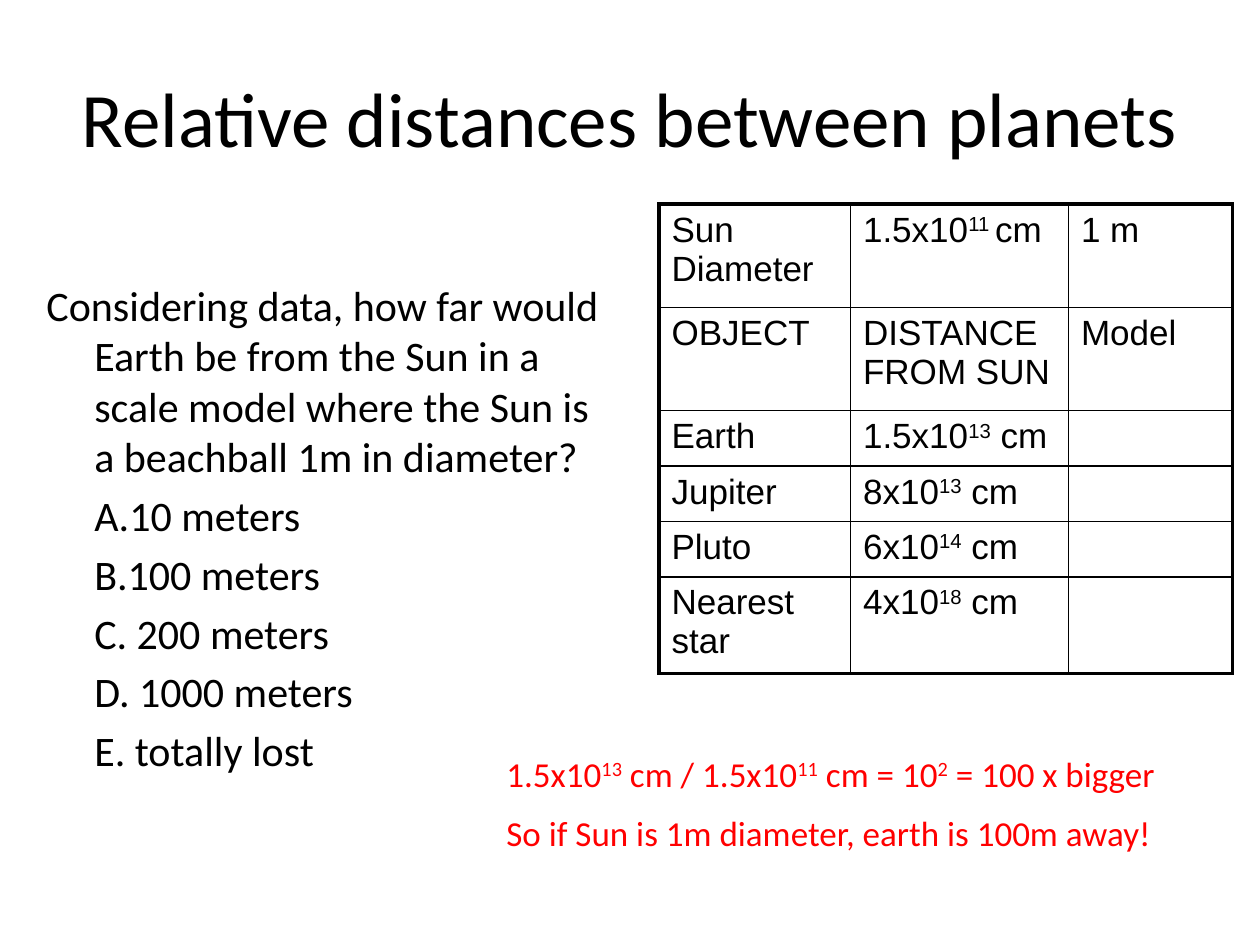
from lxml import etree
from pptx import Presentation
from pptx.dml.color import RGBColor
from pptx.enum.text import MSO_ANCHOR, PP_ALIGN
from pptx.oxml.ns import qn
from pptx.util import Inches, Pt

CENTER = PP_ALIGN.CENTER
LEFT = PP_ALIGN.LEFT
MIDDLE = MSO_ANCHOR.MIDDLE
BLACK = "000000"
RED = "FF0000"

TITLE = "Relative distances between planets"
ASK = ("Considering data, how far would Earth be from the Sun in a scale model "
       "where the Sun is a beachball 1m in diameter?")
PICKS = ["A.10 meters", "B.100 meters", "C. 200 meters", "D. 1000 meters",
         "E. totally lost"]
NOTES = ["1.5x10^13^ cm / 1.5x10^11^ cm = 10^2^ = 100 x bigger",
         "So if Sun is 1m diameter, earth is 100m away!"]
ROWS = [
    ["Sun Diameter", "1.5x10^11 ^cm", "1 m"],
    ["OBJECT", "DISTANCE FROM SUN", "Model"],
    ["Earth", "1.5x10^13^ cm", ""],
    ["Jupiter", "8x10^13^ cm", ""],
    ["Pluto", "6x10^14^ cm", ""],
    ["Nearest star", "4x10^18^ cm", ""],
]
WIDTHS = [1.52, 1.73, 1.3]
HEIGHTS = [0.82, 0.82, 0.44, 0.44, 0.44, 0.44]


def paint(color):
    """Turn a hex string into a colour."""
    return RGBColor.from_string(color)


def write(para, text, size=24, font="Calibri", color=BLACK, align=LEFT,
          before=0.2, margin=0, indent=0):
    """Fill a paragraph, raising the parts that stand between carets."""
    para.alignment = align
    para.space_before = Pt(size * before)
    props = para._p.get_or_add_pPr()
    props.set("marL", str(Inches(margin)))
    props.set("indent", str(Inches(indent)))
    for num, part in enumerate(text.split("^")):
        if not part:
            continue
        run = para.add_run()
        run.text = part
        run.font.size = Pt(size)
        run.font.name = font
        run.font.color.rgb = paint(color)
        if num % 2:
            run._r.get_or_add_rPr().set("baseline", "30000")


def add_title(slide, text):
    """Place and fill the title."""
    title = slide.shapes.title
    title.left, title.top = Inches(0.5), Inches(0.3)
    title.width, title.height = Inches(9), Inches(1.25)
    title.text_frame.vertical_anchor = MIDDLE
    write(title.text_frame.paragraphs[0], text, size=44, align=CENTER, before=0)


def add_box(slide, left, top, width, height):
    """Add a wrapping text box and return its frame."""
    box = slide.shapes.add_textbox(Inches(left), Inches(top),
                                   Inches(width), Inches(height))
    box.text_frame.word_wrap = True
    return box.text_frame


def add_quiz(slide):
    """Add the question with its choices."""
    frame = add_box(slide, 0.27, 2.17, 4.67, 4.5)
    write(frame.paragraphs[0], ASK, margin=0.38, indent=-0.38)
    for pick in PICKS:
        write(frame.add_paragraph(), pick, margin=0.38)


def add_notes(slide):
    """Add the worked answer."""
    frame = add_box(slide, 3.92, 5.92, 6.08, 0.93)
    for num, note in enumerate(NOTES):
        para = frame.add_paragraph() if num else frame.paragraphs[0]
        write(para, note, size=20, color=RED, before=0.5)


def add_edge(cell, side, width):
    """Draw one border of a cell."""
    line = etree.SubElement(cell._tc.get_or_add_tcPr(), qn("a:" + side),
                            w=str(Pt(width)))
    fill = etree.SubElement(line, qn("a:solidFill"))
    etree.SubElement(fill, qn("a:srgbClr"), val=BLACK)


def add_grid(slide):
    """Add the table of distances with a thick outer frame."""
    shape = slide.shapes.add_table(len(ROWS), len(WIDTHS), Inches(5.23),
                                   Inches(1.62), Inches(sum(WIDTHS)),
                                   Inches(sum(HEIGHTS)))
    table = shape.table
    table.first_row = table.horz_banding = False
    for col, width in zip(table.columns, WIDTHS):
        col.width = Inches(width)
    for row, height in zip(table.rows, HEIGHTS):
        row.height = Inches(height)
    for r, texts in enumerate(ROWS):
        for c, text in enumerate(texts):
            cell = table.cell(r, c)
            write(cell.text_frame.paragraphs[0], text, size=20, font="Arial")
            outer = {"lnL": c == 0, "lnR": c == len(WIDTHS) - 1,
                     "lnT": r == 0, "lnB": r == len(ROWS) - 1}
            for side, thick in outer.items():
                add_edge(cell, side, 2.25 if thick else 1)
            cell.fill.background()


def main():
    """Build the slide and save it."""
    deck = Presentation()
    deck.slide_width, deck.slide_height = Inches(10), Inches(7.5)
    slide = deck.slides.add_slide(deck.slide_layouts[5])
    add_title(slide, TITLE)
    add_quiz(slide)
    add_grid(slide)
    add_notes(slide)
    deck.save("out.pptx")


if __name__ == "__main__":
    main()
